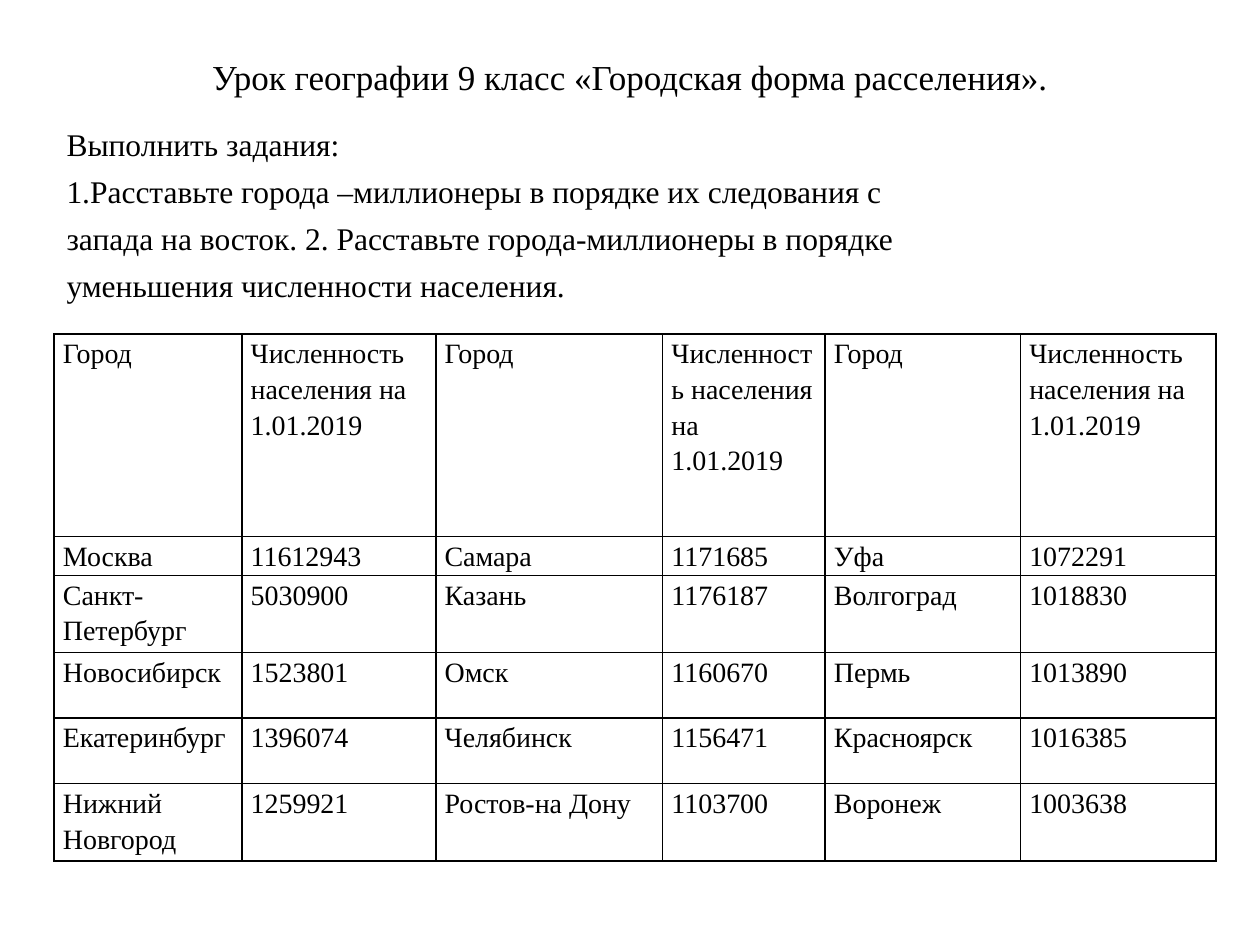
from lxml.etree import SubElement
from pptx import Presentation
from pptx.dml.color import RGBColor
from pptx.enum.text import MSO_ANCHOR, PP_ALIGN
from pptx.oxml.ns import qn
from pptx.util import Inches, Pt

# Content
TITLE = "Урок географии 9 класс «Городская форма расселения»."
TASKS = [
    "Выполнить задания:",
    "1.Расставьте города –миллионеры в порядке их следования с запада на восток. "
    "2. Расставьте города-миллионеры в порядке уменьшения численности населения.",
]
HEADER = ("Город", "Численность населения на 1.01.2019") * 3
CITIES = [
    ("Москва", "11612943", "Самара", "1171685", "Уфа", "1072291"),
    ("Санкт-Петербург", "5030900", "Казань", "1176187", "Волгоград", "1018830"),
    ("Новосибирск", "1523801", "Омск", "1160670", "Пермь", "1013890"),
    ("Екатеринбург", "1396074", "Челябинск", "1156471", "Красноярск", "1016385"),
    ("Нижний Новгород", "1259921", "Ростов-на Дону", "1103700", "Воронеж", "1003638"),
]
COLUMN_WIDTHS = [1.49, 1.54, 1.8, 1.29, 1.55, 1.55]
ROW_HEIGHTS = [1.61, 0.25] + [0.52] * 4

COLORS = {"text": "000000", "border": "000000"}
FONT = "Times New Roman"


def write(paragraph, text, size, **layout):
    for name, value in layout.items():
        setattr(paragraph, name, value)
    span = paragraph.add_run()
    span.text = text
    for name, value in {"name": FONT, "size": Pt(size), "bold": False}.items():
        setattr(span.font, name, value)
    span.font.color.rgb = RGBColor.from_string(COLORS["text"])


def add_borders(cell):
    properties = cell._tc.get_or_add_tcPr()
    for side in ("lnL", "lnR", "lnT", "lnB"):
        line = SubElement(properties, qn(f"a:{side}"), w=str(Pt(1)))
        fill = SubElement(line, qn("a:solidFill"))
        SubElement(fill, qn("a:srgbClr"), val=COLORS["border"])


def place(shape, left, top, width, height):
    bounds = {"left": left, "top": top, "width": width, "height": height}
    for name, value in bounds.items():
        setattr(shape, name, Inches(value))


deck = Presentation()
deck.slide_width, deck.slide_height = Inches(10), Inches(7.5)
page = deck.slides.add_slide(deck.slide_layouts[5])

# Title
title = page.shapes.title
place(title, 0.5, 0.3, 9, 0.62)
title.text_frame.vertical_anchor = MSO_ANCHOR.MIDDLE
write(title.text_frame.paragraphs[0], TITLE, 20, alignment=PP_ALIGN.CENTER)

# Tasks
box = page.shapes.add_textbox(0, 0, 0, 0)
place(box, 0.43, 0.79, 7.16, 1.75)
frame = box.text_frame
frame.word_wrap = True
frame.vertical_anchor = MSO_ANCHOR.MIDDLE
for index, task in enumerate(TASKS):
    paragraph = frame.add_paragraph() if index else frame.paragraphs[0]
    write(paragraph, task, 18, line_spacing=1.25)

# City table
rows = [HEADER] + CITIES
table_frame = page.shapes.add_table(
    len(rows), len(HEADER), Inches(0.43), Inches(2.65),
    Inches(sum(COLUMN_WIDTHS)), Inches(sum(ROW_HEIGHTS)))
table = table_frame.table
for column, width in zip(table.columns, COLUMN_WIDTHS):
    column.width = Inches(width)
for row, height, texts in zip(table.rows, ROW_HEIGHTS, rows):
    row.height = Inches(height)
    for cell, text in zip(row.cells, texts):
        margins = {"margin_left": 0.07, "margin_right": 0.07,
                   "margin_top": 0, "margin_bottom": 0}
        for name, value in margins.items():
            setattr(cell, name, Inches(value))
        add_borders(cell)
        cell.fill.background()
        write(cell.text_frame.paragraphs[0], text, 16, line_spacing=1.15)

deck.save("out.pptx")
